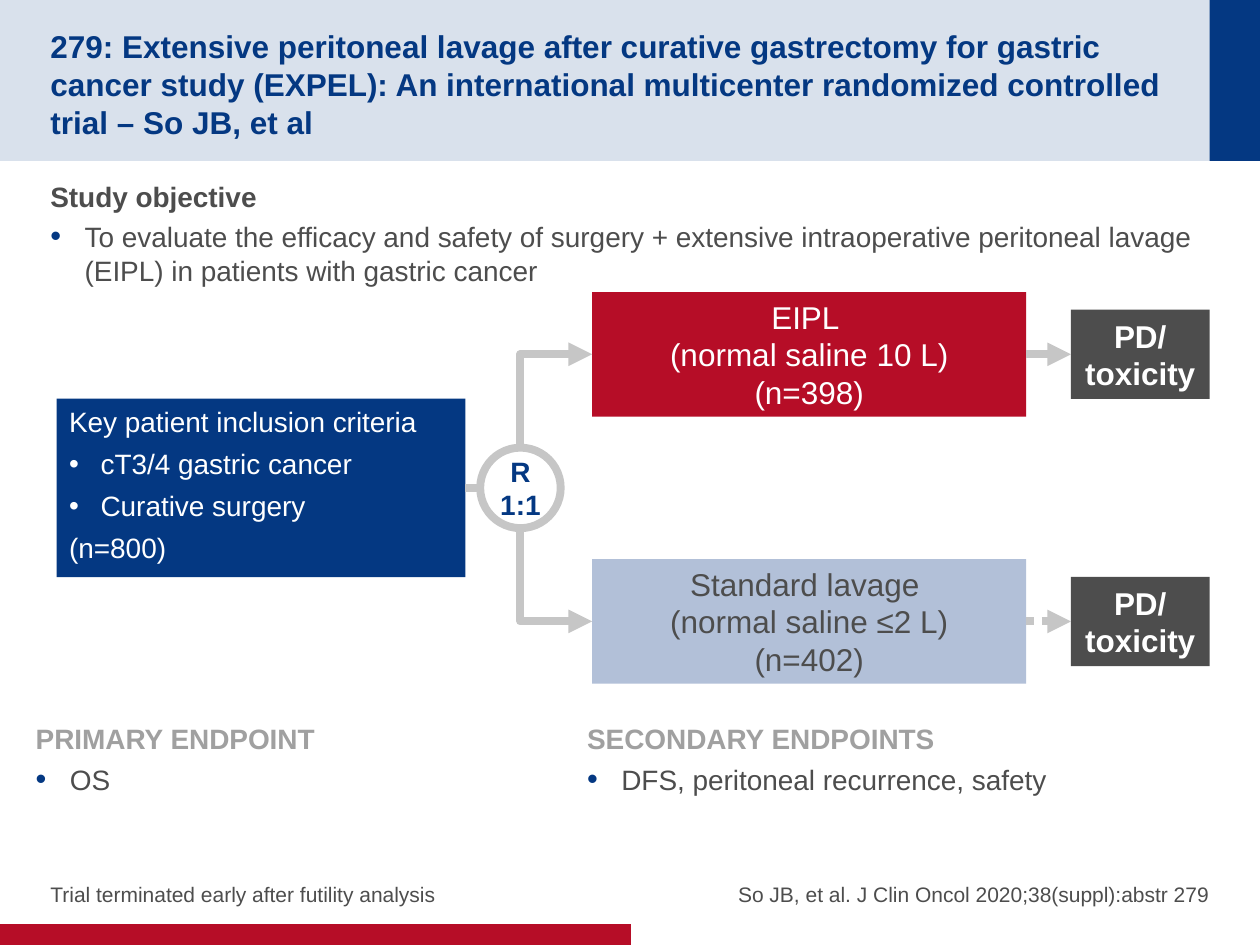
from pptx import Presentation
from pptx.dml.color import RGBColor
from pptx.enum.dml import MSO_LINE
from pptx.enum.shapes import MSO_CONNECTOR, MSO_SHAPE
from pptx.enum.text import MSO_ANCHOR, PP_ALIGN
from pptx.oxml.ns import qn
from pptx.util import Pt
from lxml import etree

STRAIGHT, ELBOW = MSO_CONNECTOR.STRAIGHT, MSO_CONNECTOR.ELBOW
RECTANGLE, OVAL = MSO_SHAPE.RECTANGLE, MSO_SHAPE.OVAL
TOP, MIDDLE, BOTTOM = MSO_ANCHOR.TOP, MSO_ANCHOR.MIDDLE, MSO_ANCHOR.BOTTOM
LEFT, CENTER, RIGHT = PP_ALIGN.LEFT, PP_ALIGN.CENTER, PP_ALIGN.RIGHT
DOTTED = MSO_LINE.ROUND_DOT

NAVY, RED, WHITE = "043882", "B60D27", "FFFFFF"
DARK, SILVER, PALE_BLUE, HEADING = "4D4D4D", "C6C6C6", "B2C0D8", "A0A0A0"


def color(value):
    return RGBColor.from_string(value)


def add_xml(parent, tag, **attributes):
    return etree.SubElement(parent, qn(tag), attributes)


def add_bullet(para, indent, bullet_color):
    properties = para._p.get_or_add_pPr()
    properties.set("marL", str(Pt(indent)))
    properties.set("indent", str(-Pt(indent)))
    if bullet_color:
        holder = add_xml(properties, "a:buClr")
        add_xml(holder, "a:srgbClr", val=bullet_color)
        add_xml(properties, "a:buSzPct", val="110000")
    add_xml(properties, "a:buFont", typeface="Arial")
    add_xml(properties, "a:buChar", char="•")


def set_frame(shape, anchor, insets, wrap=True):
    frame = shape.text_frame
    frame.word_wrap = wrap
    frame.vertical_anchor = anchor
    frame.margin_left = frame.margin_right = Pt(insets[0])
    frame.margin_top, frame.margin_bottom = Pt(insets[1]), Pt(insets[2])
    return frame


def write(frame, text, size, text_color, bold=False, align=LEFT, after=0,
          indent=0, bullet_color=None):
    para = frame.paragraphs[0]
    if para.text:
        para = frame.add_paragraph()
    para.text = text
    if indent:
        add_bullet(para, indent, bullet_color)
    para.alignment = align
    para.space_after = Pt(after)
    para.font.name = "Arial"
    para.font.size = Pt(size)
    para.font.bold = bold
    para.font.color.rgb = color(text_color)


def add_text_box(page, left, top, width, height, anchor=TOP, insets=(0, 3.6, 3.6)):
    box = page.shapes.add_textbox(Pt(left), Pt(top), Pt(width), Pt(height))
    return set_frame(box, anchor, insets)


def add_section(page, place, heading, heading_color, bullet, insets=(0, 3.6, 3.6)):
    frame = add_text_box(page, *place, insets=insets)
    write(frame, heading, 16, heading_color, bold=True, after=4)
    write(frame, bullet, 16, DARK, after=4, indent=19.6, bullet_color=NAVY)


def add_block(page, left, top, width, height, fill=None, kind=RECTANGLE):
    block = page.shapes.add_shape(kind, Pt(left), Pt(top), Pt(width), Pt(height))
    block.shadow.inherit = False
    block.line.fill.background()
    if fill:
        block.fill.solid()
        block.fill.fore_color.rgb = color(fill)
    else:
        block.fill.background()
    return block


def add_label_block(page, left, middle, width, height, fill, text, text_color, bold=False):
    block = add_block(page, left, middle - height / 2, width, height, fill)
    frame = set_frame(block, MIDDLE, (7.2, 0, 0))
    write(frame, text, 18, text_color, bold=bold, align=CENTER)
    return block


def add_line(page, kind, x1, y1, x2, y2, arrow=True, dash=None):
    line = page.shapes.add_connector(kind, Pt(x1), Pt(y1), Pt(x2), Pt(y2))
    line.line.color.rgb = color(SILVER)
    line.line.width = Pt(4.5)
    if dash:
        line.line.dash_style = dash
    if arrow:
        add_xml(line.line._get_or_add_ln(), "a:tailEnd", type="triangle")
    add_xml(line._element.spPr, "a:effectLst")
    return line


def add_branch(page, x, y, target, middle):
    x_end = target.left.pt
    line = add_line(page, ELBOW, x, y, x_end, middle)
    line.end_connect(target, 1)
    run, rise = x_end - x, abs(middle - y)
    line.left = Pt((x + x_end - rise) / 2)
    line.top = Pt((y + middle - run) / 2)
    line.width, line.height = Pt(rise), Pt(run)
    upward = middle < y
    properties = line._element.spPr
    properties.find(qn("a:prstGeom")).set("prst", "bentConnector2")
    transform = properties.find(qn("a:xfrm"))
    transform.set("rot", str((90 if upward else 270) * 60000))
    transform.set("flipH", "1")
    transform.set("flipV", "1" if upward else "0")


def add_arm(page, middle, fill, text, text_color, dash=None):
    arm = add_label_block(page, 338.4, middle, 248, 71.2, fill, text, text_color)
    outcome = add_label_block(page, 612, middle, 79.2, 51, DARK, "PD/\vtoxicity", WHITE, bold=True)
    arrow = add_line(page, STRAIGHT, 586.4, middle, 612, middle, dash=dash)
    arrow.begin_connect(arm, 3)
    arrow.end_connect(outcome, 1)
    return arm


def add_flow(page):
    center_x, center_y, radius = 297.4, 278.8, 23
    criteria = add_block(page, 32.4, center_y - 51, 233.6, 102, NAVY)
    frame = set_frame(criteria, TOP, (7.2, 3.6, 3.6))
    for text, indent in (("Key patient inclusion criteria", 0), ("cT3/4 gastric cancer", 18),
                         ("Curative surgery", 18), ("(n=800)", 0)):
        write(frame, text, 16, WHITE, after=4.8, indent=indent)

    circle = add_block(page, center_x - radius, center_y - radius, 2 * radius, 2 * radius, kind=OVAL)
    circle.line.color.rgb = color(SILVER)
    circle.line.width = Pt(4.5)
    frame = set_frame(circle, MIDDLE, (7.2, 3.6, 3.6), wrap=False)
    for text in ("R", "1:1"):
        write(frame, text, 16, NAVY, bold=True, align=CENTER)
    link = add_line(page, STRAIGHT, 266, center_y, center_x - radius, center_y, arrow=False)
    link.begin_connect(criteria, 3)

    for side, fill, text, text_color, dash in (
            (-1, RED, "EIPL \v(normal saline 10 L)\v(n=398)", WHITE, None),
            (1, PALE_BLUE, "Standard lavage \v(normal saline ≤2 L)\v(n=402)", DARK, DOTTED)):
        middle = center_y + side * 76.3
        arm = add_arm(page, middle, fill, text, text_color, dash)
        add_branch(page, center_x, center_y + side * radius, arm, middle)


def add_header(page):
    band = add_block(page, 0, 0, 720, 92, NAVY)
    add_xml(band._element.spPr.find(".//" + qn("a:srgbClr")), "a:alpha", val="15000")
    add_block(page, 691.2, 0, 28.8, 92, NAVY)
    title = add_text_box(page, 28.8, 14.4, 649, 63.4, MIDDLE, (0, 3.6, 0))
    write(title, "279: Extensive peritoneal lavage after curative gastrectomy for gastric "
                 "cancer study (EXPEL): An international multicenter randomized controlled "
                 "trial – So JB, et al", 18, NAVY, bold=True)


def add_footer(page):
    add_block(page, 0, 528, 360.6, 12, RED)
    for left, width, align, text in (
            (28.8, 316.8, LEFT, "Trial terminated early after futility analysis"),
            (365.8, 325.4, RIGHT, "So JB, et al. J Clin Oncol 2020;38(suppl):abstr 279")):
        frame = add_text_box(page, left, 480, width, 38.4, BOTTOM, (0, 0, 0))
        write(frame, text, 12, DARK, align=align, after=4)


def main():
    deck = Presentation()
    deck.slide_width, deck.slide_height = Pt(720), Pt(540)
    page = deck.slides.add_slide(deck.slide_layouts[6])
    add_header(page)
    add_section(page, (28.8, 98.8, 662.4, 373.6), "Study objective", DARK,
                "To evaluate the efficacy and safety of surgery + extensive intraoperative "
                "peritoneal lavage (EIPL) in patients with gastric cancer")
    add_flow(page)
    add_section(page, (20.4, 409, 325.4, 61.2), "PRIMARY ENDPOINT", HEADING, "OS")
    add_section(page, (328.4, 409, 354.2, 65.6), "SECONDARY ENDPOINTS", HEADING,
                "DFS, peritoneal recurrence, safety", insets=(7.2, 3.6, 3.6))
    add_footer(page)
    deck.save("out.pptx")


if __name__ == "__main__":
    main()
